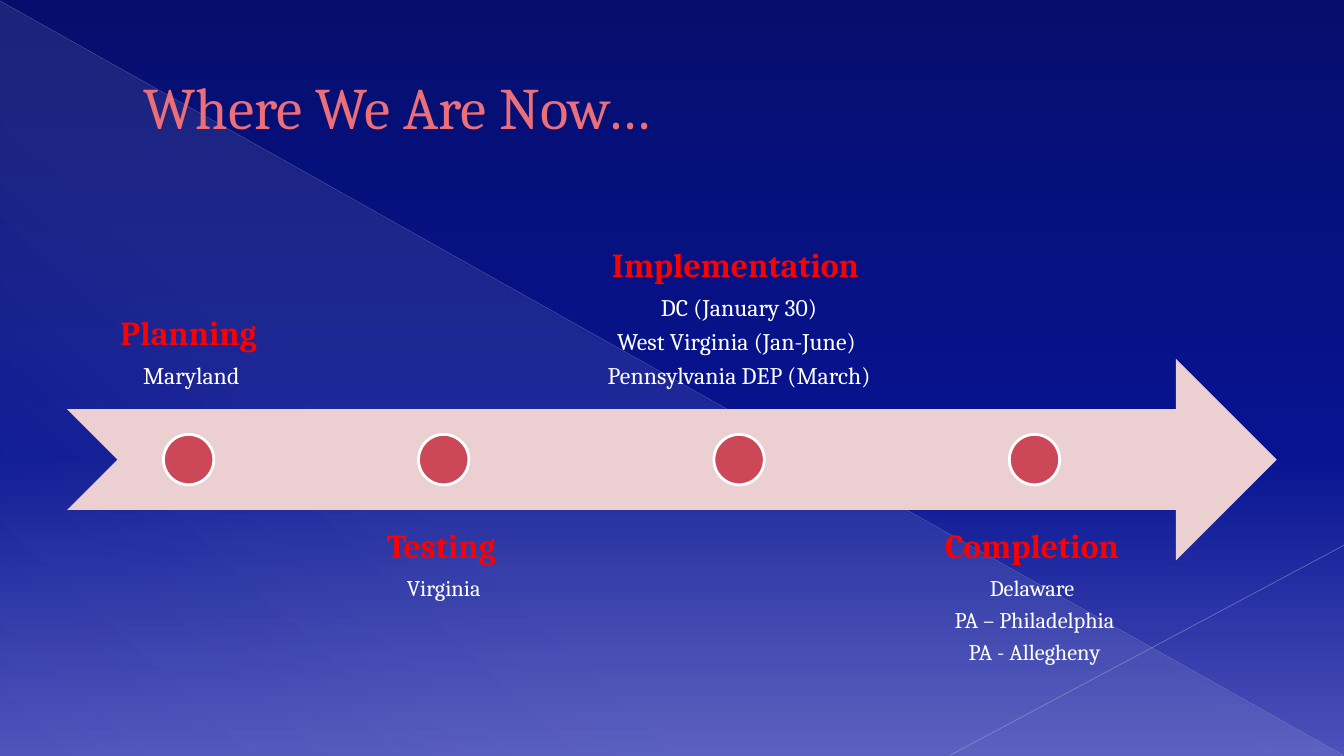
import pptx
import pptx.dml.color
import pptx.enum.shapes
import pptx.enum.text
import pptx.oxml
import pptx.oxml.ns
import pptx.util
import lxml.etree

Pt = pptx.util.Pt
qn = pptx.oxml.ns.qn
SHAPES = pptx.enum.shapes.MSO_SHAPE
ANCHOR = pptx.enum.text.MSO_ANCHOR
ALIGN = pptx.enum.text.PP_ALIGN

WIDTH, HEIGHT = 960, 540
FONT = "Cambria"
HEADING_SIZE = 24
LABEL_GAP = 8.7

# heading, size of the space after it, line size, lines, label width
STAGES = [
    ("Planning", None, 17, [" Maryland"], 173.5),
    ("Testing", 16, 16, ["Virginia"], 173.5),
    ("Implementation", 24, 17,
     ["DC (January 30)", "West Virginia (Jan-June) ", "Pennsylvania DEP (March)"], 231.1),
    ("Completion", 16, 16, ["Delaware ", "PA – Philadelphia", "PA - Allegheny"], 173.5),
]


def color(hex_string):
    return pptx.dml.color.RGBColor.from_string(hex_string)


def add_color(parent, hex_string, opacity=100):
    """Append a colour element, with its opacity in percent."""
    element = lxml.etree.SubElement(parent, qn("a:srgbClr"), val=hex_string)
    if opacity < 100:
        lxml.etree.SubElement(element, qn("a:alpha"), val=str(opacity * 1000))


def set_gradient(fill, owner, angle, stops):
    """Fill with stops of (position, colour, opacity); the angle runs clockwise."""
    fill.gradient()
    fill.gradient_angle = 360 - angle
    stop_list = owner.element.xpath(".//a:gradFill/a:gsLst")[0]
    for stop in list(stop_list):
        stop_list.remove(stop)
    for position, hex_string, opacity in stops:
        stop = lxml.etree.SubElement(stop_list, qn("a:gs"), pos=str(position * 1000))
        add_color(stop, hex_string, opacity)


def add_shape(slide, kind, left, top, width, height, fill=None, line=None):
    shape = slide.shapes.add_shape(kind, Pt(left), Pt(top), Pt(width), Pt(height))
    shape.shadow.inherit = False
    if fill:
        shape.fill.solid()
        shape.fill.fore_color.rgb = color(fill)
    if line:
        shape.line.color.rgb = color(line)
        shape.line.width = Pt(2)
    else:
        shape.line.fill.background()
    return shape


def add_line(slide, start, end, hex_string, width, opacity):
    line = slide.shapes.add_connector(
        pptx.enum.shapes.MSO_CONNECTOR.STRAIGHT, *map(Pt, start + end))
    line.line.width = Pt(width)
    line.line.color.rgb = color(hex_string)
    solid_fill = line.element.xpath("./p:spPr/a:ln/a:solidFill")[0]
    solid_fill.remove(solid_fill[0])
    add_color(solid_fill, hex_string, opacity)
    lxml.etree.SubElement(line.element.spPr, qn("a:effectLst"))


def add_text_frame(slide, left, top, width, height, anchor):
    frame = slide.shapes.add_textbox(Pt(left), Pt(top), Pt(width), Pt(height)).text_frame
    frame.word_wrap = True
    frame.vertical_anchor = anchor
    return frame


def add_run(paragraph, text, size, hex_string, bold=False):
    run = paragraph.add_run()
    run.text = text
    run.font.name = FONT
    run.font.size = Pt(size)
    run.font.bold = bold
    run.font.color.rgb = color(hex_string)
    return run


def format_label_paragraph(paragraph):
    """Centre the paragraph, with space after it relative to its size."""
    paragraph.alignment = ALIGN.CENTER
    paragraph.line_spacing = 0.9
    paragraph.space_after = Pt(0)
    spacing = paragraph._p.xpath("./a:pPr/a:spcAft/a:spcPts")[0]
    spacing.tag = qn("a:spcPct")
    spacing.set("val", "35000")


def add_backdrop(slide, width, height):
    set_gradient(slide.background.fill, slide, 90,
                 [(0, "060E6D", 100), (60, "071391", 100), (100, "4C52BA", 100)])
    triangle = add_shape(slide, SHAPES.RIGHT_TRIANGLE, 0.7, 1.4, width - 1.4, height - 1.4)
    set_gradient(triangle.fill, triangle, 133,
                 [(0, "FFFFFF", 10), (70, "FFFFFF", 8), (100, "FFFFFF", 1)])
    add_line(slide, (0, 0.7), (width - 0.7, height - 0.7), "B1B2C7", 0.39, 35)
    add_line(slide, (width, height - 150.5), (width - 281, height - 0.7), "BABACD", 0.47, 45)


def add_title(slide, left, top, width, height):
    frame = add_text_frame(slide, left, top, width, height, ANCHOR.MIDDLE)
    frame.margin_left = Pt(45.4)
    run = add_run(frame.paragraphs[0], " Where We Are Now…", 42, "EB6E78")
    outline = pptx.oxml.parse_xml(
        f'<a:ln {pptx.oxml.ns.nsdecls("a")} w="6350"><a:solidFill/></a:ln>')
    add_color(outline[0], "8D313C")
    run.font._element.insert(0, outline)


def add_label(slide, left, top, width, height, anchor, stage):
    heading, space_size, line_size, lines, _ = stage
    frame = add_text_frame(slide, left, top, width, height, anchor)
    frame.margin_left = frame.margin_right = Pt(13.7)
    frame.margin_top = frame.margin_bottom = Pt(13.7)
    paragraph = frame.paragraphs[0]
    format_label_paragraph(paragraph)
    add_run(paragraph, heading, HEADING_SIZE, "FF0000", True)
    if space_size:
        add_run(paragraph, " ", space_size, "FF0000", True)
    for line in lines:
        paragraph = frame.add_paragraph()
        format_label_paragraph(paragraph)
        add_run(paragraph, line, line_size, "FFFFFF")


def add_timeline(slide, left, top, width, height):
    """Arrow across the middle, with labels in turn above and below it."""
    band = height * 0.4
    middle = top + height / 2
    dot = band / 4
    add_shape(slide, SHAPES.NOTCHED_RIGHT_ARROW, left, middle - band / 2, width, band, "ECCFD1")
    for index, stage in enumerate(STAGES):
        label_width = stage[-1]
        if index % 2 == 0:
            label_top, anchor = top, ANCHOR.BOTTOM
        else:
            label_top, anchor = top + height - band, ANCHOR.TOP
        add_label(slide, left, label_top, label_width, band, anchor, stage)
        add_shape(slide, SHAPES.OVAL, left + (label_width - dot) / 2, middle - dot / 2,
                  dot, dot, "CC4757", "FFFFFF")
        left += label_width + LABEL_GAP


def main():
    presentation = pptx.Presentation()
    presentation.slide_width = Pt(WIDTH)
    presentation.slide_height = Pt(HEIGHT)
    slide = presentation.slides.add_slide(presentation.slide_layouts[6])
    add_backdrop(slide, WIDTH, HEIGHT)
    add_title(slide, 48, 21, 864, 110)
    add_timeline(slide, 48, 148.3, 864, 360)
    presentation.save("out.pptx")


if __name__ == "__main__":
    main()
